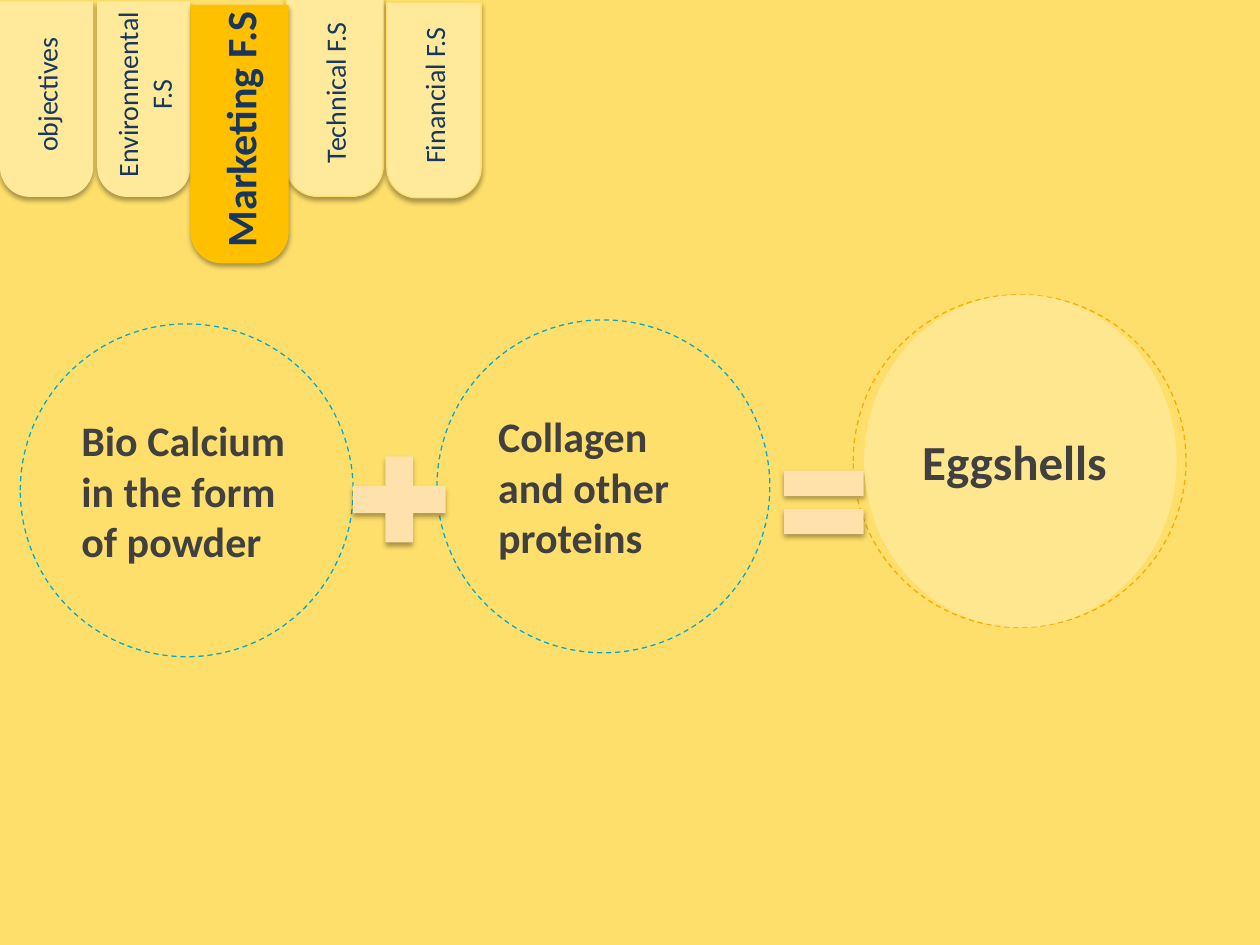
import pptx
import pptx.util
import pptx.dml.color
import pptx.enum.dml
import pptx.enum.shapes
import pptx.enum.text
import pptx.oxml

Cm, Pt = pptx.util.Cm, pptx.util.Pt
RGB = pptx.dml.color.RGBColor.from_string
Kind = pptx.enum.shapes.MSO_SHAPE
Align = pptx.enum.text.PP_ALIGN
DASH = pptx.enum.dml.MSO_LINE.DASH
NS = 'xmlns:a="http://schemas.openxmlformats.org/drawingml/2006/main"'


class Theme:
    font = "Calibri"
    back, pale, gold, peach = "FFDF6B", "FFEA9C", "FFC000", "FFE1AB"
    blue, amber = "01ABCF", "F9AC08"
    navy, grey = "17375E", "404040"
    small, large, huge = 16, 24, 28


def draw(kind, box, fill=None, line=None, dash=None, shade=False):
    shape = slide.shapes.add_shape(kind, *[Cm(n) for n in box])
    shape.shadow.inherit = False
    if fill:
        shape.fill.solid()
        shape.fill.fore_color.rgb = RGB(fill)
    else:
        shape.fill.background()
    if line:
        shape.line.color.rgb = RGB(line)
        shape.line.width = Pt(0.75)
        if dash:
            shape.line.dash_style = dash
    else:
        shape.line.fill.background()
    if shade:
        glow = shape.element.spPr.find(pptx.oxml.ns.qn("a:effectLst"))
        glow.append(pptx.oxml.parse_xml(
            f'<a:outerShdw {NS} blurRad="{Pt(3.1)}" dist="{Pt(1.8)}" dir="5400000" rotWithShape="0">'
            '<a:srgbClr val="000000"><a:alpha val="35000"/></a:srgbClr></a:outerShdw>'))
    return shape


def write(shape, text, size, color, bold=False, align=Align.LEFT, inset=0.25):
    frame = shape.text_frame
    frame.word_wrap = True
    frame.vertical_anchor = pptx.enum.text.MSO_ANCHOR.MIDDLE
    frame.margin_left = frame.margin_right = Cm(inset)
    frame.margin_top = frame.margin_bottom = Cm(inset)
    para = frame.paragraphs[0]
    para.alignment = align
    run = para.add_run()
    run.text = text
    run.font.name = Theme.font
    run.font.size = Pt(size)
    run.font.bold = bold
    run.font.color.rgb = RGB(color)


deck = pptx.Presentation()
deck.slide_width, deck.slide_height = Cm(25.4), Cm(19.05)
slide = deck.slides.add_slide(deck.slide_layouts[6])
slide.background.fill.solid()
slide.background.fill.fore_color.rgb = RGB(Theme.back)

# Dashed rings, with the signs between them
ring = 6.71
rings = [
    (8.81, 6.45, Theme.blue, "Collagen and other proteins"),
    (17.2, 5.94, Theme.amber, None),
    (0.41, 6.53, Theme.blue, "Bio Calcium in the form of powder"),
]
for left, top, color, text in rings:
    shape = draw(Kind.OVAL, (left, top, ring, ring), line=color, dash=DASH)
    if text:
        write(shape, text, Theme.large, Theme.grey, bold=True)

signs = [
    (Kind.MATH_PLUS, (6.78, 8.89, 2.54, 2.36)),
    (Kind.MATH_EQUAL, (15.52, 9.04, 2.18, 2.18)),
]
for kind, box in signs:
    draw(kind, box, fill=Theme.peach, shade=True)

# Result disc, partly transparent
disc = draw(Kind.OVAL, (17.42, 5.94, 6.3, ring), fill=Theme.pale)
tint = disc.element.spPr.find(".//" + pptx.oxml.ns.qn("a:srgbClr"))
tint.append(pptx.oxml.parse_xml(f'<a:alpha {NS} val="75000"/>'))
write(disc, "Eggshells", Theme.huge, Theme.grey, bold=True)

# Hanging tabs, the current one last and in front
tabs = [
    ("Technical F.S", (5.77, -0.03, 1.96, 3.99), Theme.back),
    ("Environmental F.S", (1.96, 0.03, 1.88, 3.94), None),
    ("objectives", (0, 0.03, 1.88, 3.94), None),
    ("Financial F.S", (7.8, 0.05, 1.9, 3.94), Theme.back),
    ("Marketing F.S", (3.84, 0.1, 1.98, 5.21), None),
]
for text, box, line in tabs:
    front = text == "Marketing F.S"
    tab = draw(Kind.ROUND_2_SAME_RECTANGLE, box, line=line, shade=True,
               fill=Theme.gold if front else Theme.pale)
    tab.adjustments[0] = 0.32
    tab.element.spPr.xfrm.set("flipV", "1")
    write(tab, text, Theme.large if front else Theme.small, Theme.navy,
          bold=front, align=Align.CENTER, inset=0)
    tab.text_frame._txBody.bodyPr.set("vert", "vert")

deck.save("out.pptx")
